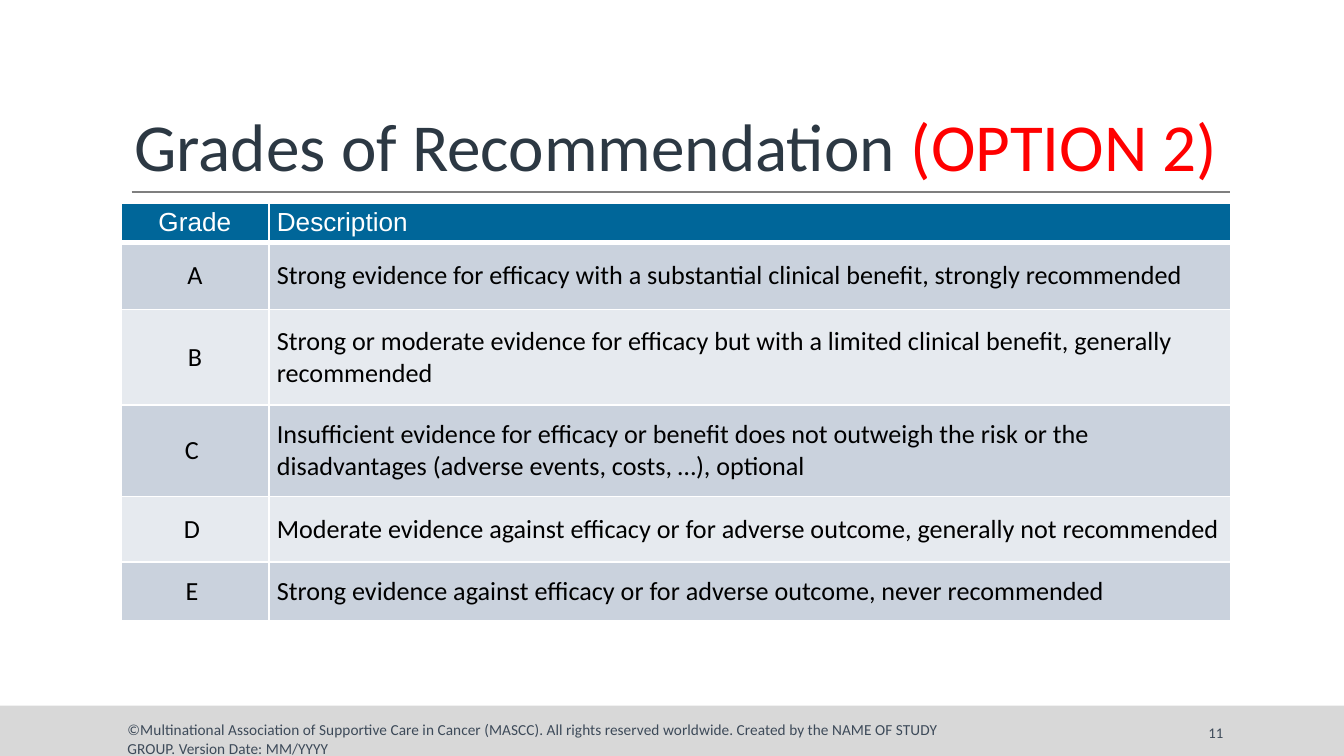
import pptx
import pptx.dml.color
import pptx.enum.shapes
import pptx.enum.text
import pptx.oxml
import pptx.oxml.ns
import pptx.util
from pptx.util import Inches

ALIGN = pptx.enum.text.PP_ALIGN
ANCHOR = pptx.enum.text.MSO_ANCHOR
DARK = "2C3843"
SLATE = "3D4A59"
BLACK = "000000"
WHITE = "FFFFFF"
HEADER = "006699"
BANDS = ["CAD2DD", "E6EAEF"]

GRADES = [
    ("Grade", "Description"),
    ("A", "Strong evidence for efficacy with a substantial clinical benefit, strongly recommended"),
    ("B", "Strong or moderate evidence for efficacy but with a limited clinical benefit, generally recommended"),
    ("C ", "Insufficient evidence for efficacy or benefit does not outweigh the risk or the disadvantages (adverse events, costs, …), optional"),
    ("D ", "Moderate evidence against efficacy or for adverse outcome, generally not recommended"),
    ("E ", "Strong evidence against efficacy or for adverse outcome, never recommended"),
]
COLUMN_WIDTHS = [1.1, 7.16]
ROW_HEIGHTS = [0.29, 0.5, 0.71, 0.68, 0.49, 0.44]
COPYRIGHT = (
    "©Multinational Association of Supportive Care in Cancer (MASCC). All rights reserved "
    "worldwide. Created by the NAME OF STUDY GROUP. Version Date: MM/YYYY"
)


def rgb(value):
    return pptx.dml.color.RGBColor.from_string(value)


class SlideBuilder:
    font = "Calibri"

    def __init__(self, slide):
        self.slide = slide

    def format(self, paragraph, size, color=None, align=ALIGN.LEFT, font=None):
        paragraph.alignment = align
        paragraph.font.name = font or self.font
        paragraph.font.size = pptx.util.Pt(size)
        if color:
            paragraph.font.color.rgb = rgb(color)

    def band(self, left, top, width, height, color):
        band = self.slide.shapes.add_shape(
            pptx.enum.shapes.MSO_SHAPE.RECTANGLE,
            Inches(left), Inches(top), Inches(width), Inches(height))
        band.shadow.inherit = False
        band.fill.solid()
        band.fill.fore_color.rgb = rgb(color)
        band.line.fill.background()

    def rule(self, left, right, top, color, weight):
        rule = self.slide.shapes.add_connector(
            pptx.enum.shapes.MSO_CONNECTOR.STRAIGHT,
            Inches(left), Inches(top), Inches(right), Inches(top))
        rule.line.color.rgb = rgb(color)
        rule.line.width = pptx.util.Pt(weight)
        rule._element.spPr.append(pptx.oxml.parse_xml(
            f'<a:effectLst {pptx.oxml.ns.nsdecls("a")}/>'))

    def title(self, left, top, width, height, parts, size):
        title = self.slide.shapes.title
        title.left, title.top = Inches(left), Inches(top)
        title.width, title.height = Inches(width), Inches(height)
        frame = title.text_frame
        frame.auto_size = pptx.enum.text.MSO_AUTO_SIZE.NONE
        frame.vertical_anchor = ANCHOR.BOTTOM
        heading = frame.paragraphs[0]
        heading.line_spacing = 0.85
        self.format(heading, size)
        for wording, color in parts:
            run = heading.add_run()
            run.text = wording
            run.font.color.rgb = rgb(color)

    def text(self, left, top, width, height, wording, size, color,
             align=ALIGN.LEFT, anchor=ANCHOR.TOP):
        box = self.slide.shapes.add_textbox(
            Inches(left), Inches(top), Inches(width), Inches(height))
        frame = box.text_frame
        frame.word_wrap = True
        frame.vertical_anchor = anchor
        frame.text = wording
        self.format(frame.paragraphs[0], size, color, align)

    def borders(self, cell, bottom):
        weights = {"lnL": 1, "lnR": 1, "lnT": 1, "lnB": bottom}
        for position, (side, weight) in enumerate(weights.items()):
            cell._tc.get_or_add_tcPr().insert(position, pptx.oxml.parse_xml(
                f'<a:{side} {pptx.oxml.ns.nsdecls("a")} w="{pptx.util.Pt(weight)}">'
                f'<a:solidFill><a:srgbClr val="{WHITE}"/></a:solidFill></a:{side}>'))

    def table(self, left, top, rows, widths, heights, size):
        table = self.slide.shapes.add_table(
            len(rows), len(widths), Inches(left), Inches(top),
            Inches(sum(widths)), Inches(sum(heights))).table
        table.first_row = table.horz_banding = False
        for column, width in zip(table.columns, widths):
            column.width = Inches(width)
        for index, (row, height) in enumerate(zip(table.rows, heights)):
            row.height = Inches(height)
            is_header = index == 0
            for column, cell in enumerate(row.cells):
                cell.margin_left = cell.margin_right = Inches(0.06)
                cell.margin_top = cell.margin_bottom = Inches(0.03)
                cell.vertical_anchor = ANCHOR.MIDDLE
                cell.fill.solid()
                cell.fill.fore_color.rgb = rgb(HEADER if is_header else BANDS[(index - 1) % 2])
                cell.text = rows[index][column]
                self.format(cell.text_frame.paragraphs[0], size,
                            WHITE if is_header else BLACK,
                            ALIGN.LEFT if column else ALIGN.CENTER,
                            "Arial" if is_header else None)
                self.borders(cell, 3 if is_header else 1)


def main():
    deck = pptx.Presentation()
    deck.slide_width = Inches(10)
    deck.slide_height = deck.slide_width * 9 // 16
    builder = SlideBuilder(deck.slides.add_slide(deck.slide_layouts[5]))
    builder.band(0, 5.25, 10, 0.38, "D8D8D8")
    builder.rule(0.98, 9.15, 1.43, "7F7F7F", 0.75)
    builder.title(0.9, 0.24, 8.3, 1.19,
                  [("Grades of Recommendation ", DARK), ("(OPTION 2)", "FF0000")], 36)
    builder.text(8.12, 5.3, 1.08, 0.3, "11", 7.9, SLATE, ALIGN.RIGHT, ANCHOR.MIDDLE)
    builder.text(0.85, 5.31, 6.5, 0.3, COPYRIGHT, 8.25, SLATE)
    builder.table(0.9, 1.51, GRADES, COLUMN_WIDTHS, ROW_HEIGHTS, 14)
    deck.save("out.pptx")


if __name__ == "__main__":
    main()
